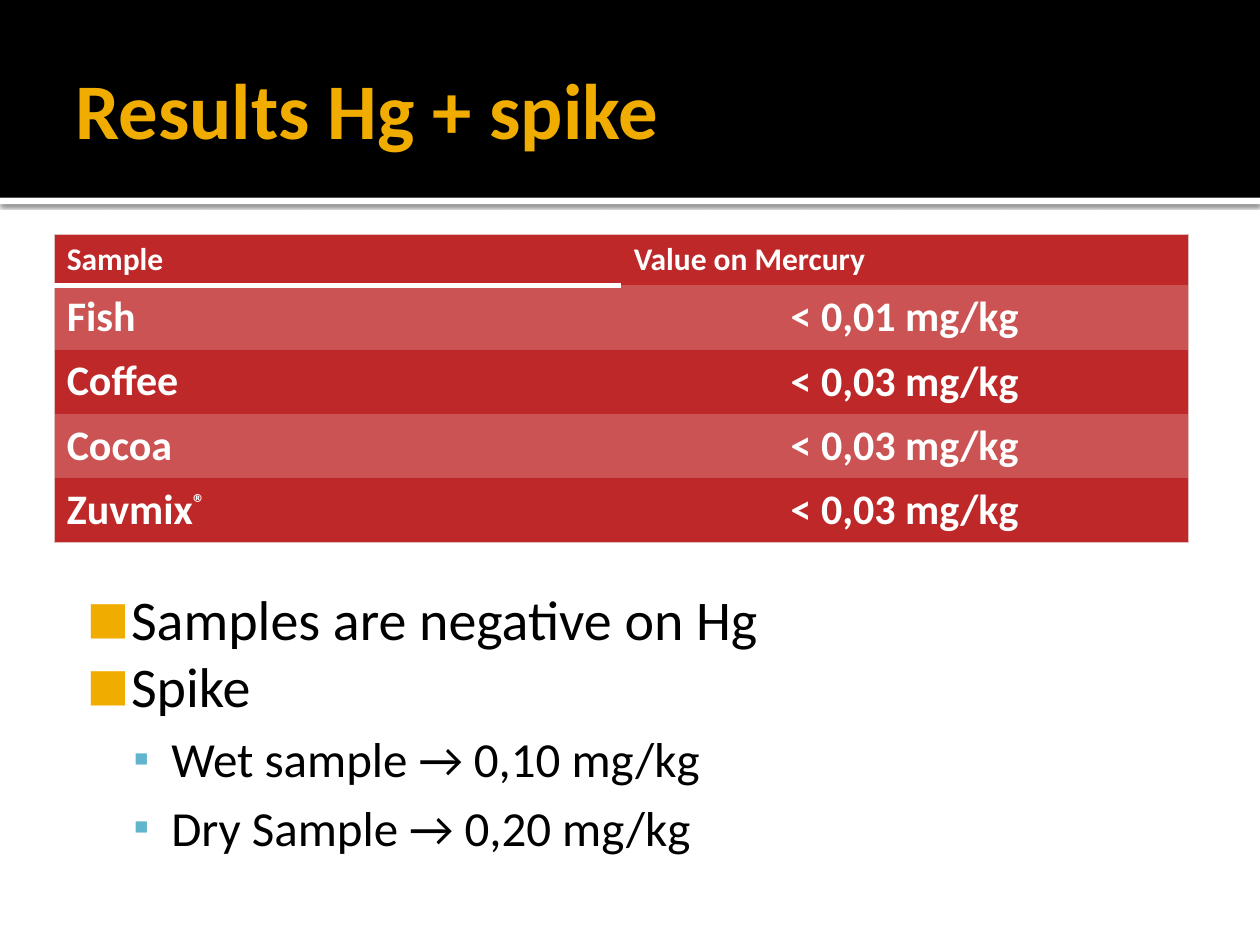
from lxml.etree import SubElement
from pptx import Presentation
from pptx.dml.color import RGBColor
from pptx.enum.shapes import MSO_SHAPE
from pptx.enum.text import MSO_ANCHOR, MSO_AUTO_SIZE, PP_ALIGN
from pptx.oxml import parse_xml
from pptx.oxml.ns import nsdecls, qn
from pptx.util import Inches, Pt

GOLD, BLUE, RED, PINK = "F0AD00", "60B5CC", "BE2828", "CB5353"
WHITE, BLACK, EDGE = "FFFFFF", "000000", "E1BCBC"
PLAIN = "{2D5ABB26-0587-4C30-8999-92F81FD0307C}"
ROWS = [
    ("Sample", "Value on Mercury"),
    ("Fish", "< 0,01 mg/kg"),
    ("Coffee", "< 0,03 mg/kg"),
    ("Cocoa", "< 0,03 mg/kg"),
    ("Zuvmix®", "< 0,03 mg/kg"),
]
ITEMS = [
    ("Samples are negative on Hg", 0),
    ("Spike", 0),
    ("Wet sample → 0,10 mg/kg", 1),
    ("Dry Sample → 0,20 mg/kg", 1),
]
LEVELS = [
    (32, 0.48, -0.35, 0, "■", GOLD, 80),
    (28, 0.8, -0.3, 5.6, "▪", BLUE, 90),
]


def color(code):
    return RGBColor.from_string(code)


def add_run(para, text, size, code, bold=False):
    run = para.add_run()
    run.text = text
    font = run.font
    font.name, font.size, font.bold = "Calibri", Pt(size), bold
    font.color.rgb = color(code)
    return run


def place(shape, left, top, width, height):
    shape.left, shape.top = Inches(left), Inches(top)
    shape.width, shape.height = Inches(width), Inches(height)


def set_frame(frame, anchor, *sides):
    frame.word_wrap = True
    frame.auto_size = MSO_AUTO_SIZE.NONE
    frame.vertical_anchor = anchor
    (frame.margin_left, frame.margin_top,
     frame.margin_right, frame.margin_bottom) = map(Inches, sides)


def add_bar(slide, order, top, height, code):
    bar = slide.shapes.add_shape(
        MSO_SHAPE.RECTANGLE, 0, Inches(top), Inches(10), Inches(height))
    bar.shadow.inherit = False
    bar.fill.solid()
    bar.fill.fore_color.rgb = color(code)
    bar.line.fill.background()
    slide.shapes._spTree.insert(2 + order, bar._element)
    return bar


def add_shade(shape):
    glow = shape._element.spPr.find(qn("a:effectLst"))
    glow.append(parse_xml(
        f'<a:outerShdw {nsdecls("a")} blurRad="{Pt(2.5)}" dist="{Pt(0.8)}" '
        f'dir="5400000" rotWithShape="0"><a:srgbClr val="{BLACK}">'
        '<a:alpha val="60000"/></a:srgbClr></a:outerShdw>'))


def add_title(slide):
    title = slide.shapes.title
    place(title, 0.5, 0.17, 9, 1.37)
    set_frame(title.text_frame, MSO_ANCHOR.MIDDLE, 0.1, 0.05, 0.05, 0.05)
    para = title.text_frame.paragraphs[0]
    para.alignment = PP_ALIGN.LEFT
    add_run(para, "Results Hg + spike", 45, GOLD, True)


def set_edges(cell, edges):
    props = cell._tc.get_or_add_tcPr()
    for spot, (side, code, width) in enumerate(edges):
        props.insert(spot, parse_xml(
            f'<a:ln{side} {nsdecls("a")} w="{Pt(width)}"><a:solidFill>'
            f'<a:srgbClr val="{code}"/></a:solidFill></a:ln{side}>'))


def fill_cell(cell, row, col, text):
    cell.fill.solid()
    cell.fill.fore_color.rgb = color(PINK if row % 2 else RED)
    para = cell.text_frame.paragraphs[0]
    if row and col:
        para.alignment = PP_ALIGN.CENTER
        cell.vertical_anchor = MSO_ANCHOR.MIDDLE
    size = 24 if row else 18
    name, mark, _ = text.partition("®")
    add_run(para, name, size, WHITE, True)
    if mark:
        run = add_run(para, mark, size, WHITE, True)
        run.font._element.set("baseline", "30000")
    edges = [("R" if col else "L", EDGE, 0.5)]
    if row == 0:
        edges.append(("T", EDGE, 0.5))
        if col == 0:
            edges.append(("B", WHITE, 3.82))
    elif row == len(ROWS) - 1:
        edges.append(("B", EDGE, 0.5))
    set_edges(cell, edges)


def add_grid(slide):
    frame = slide.shapes.add_table(
        len(ROWS), 2, Inches(0.43), Inches(1.86), Inches(9), Inches(2.43))
    grid = frame.table
    grid.first_row = grid.horz_banding = False
    grid._tbl.tblPr.find(qn("a:tableStyleId")).text = PLAIN
    for row, texts in enumerate(ROWS):
        grid.rows[row].height = Inches(0.51 if row else 0.4)
        for col, text in enumerate(texts):
            fill_cell(grid.cell(row, col), row, col, text)


def set_bullet(para, left, hang, mark, code, scale):
    props = para._p.get_or_add_pPr()
    props.set("marL", str(Inches(left)))
    props.set("indent", str(Inches(hang)))
    tint = SubElement(props, qn("a:buClr"))
    SubElement(tint, qn("a:srgbClr"), val=code)
    SubElement(props, qn("a:buSzPct"), val=str(scale * 1000))
    SubElement(props, qn("a:buFont"), typeface="Calibri")
    SubElement(props, qn("a:buChar"), char=mark)


def add_list(slide):
    body = slide.placeholders[1]
    place(body, 0.5, 4.54, 9, 2.46)
    frame = body.text_frame
    set_frame(frame, MSO_ANCHOR.TOP, 0.06, 0.1, 0.1, 0.05)
    for spot, (text, level) in enumerate(ITEMS):
        para = frame.add_paragraph() if spot else frame.paragraphs[0]
        size, left, hang, gap, mark, code, scale = LEVELS[level]
        para.level = level
        para.space_before = Pt(gap)
        set_bullet(para, left, hang, mark, code, scale)
        add_run(para, text, size, BLACK)


def main():
    deck = Presentation()
    deck.slide_width, deck.slide_height = Inches(10), Inches(7.5)
    slide = deck.slides.add_slide(deck.slide_layouts[1])
    add_shade(add_bar(slide, 0, 1.57, 0.05, WHITE))
    add_bar(slide, 1, 0, 1.57, BLACK)
    add_title(slide)
    add_grid(slide)
    add_list(slide)
    deck.save("out.pptx")


if __name__ == "__main__":
    main()
